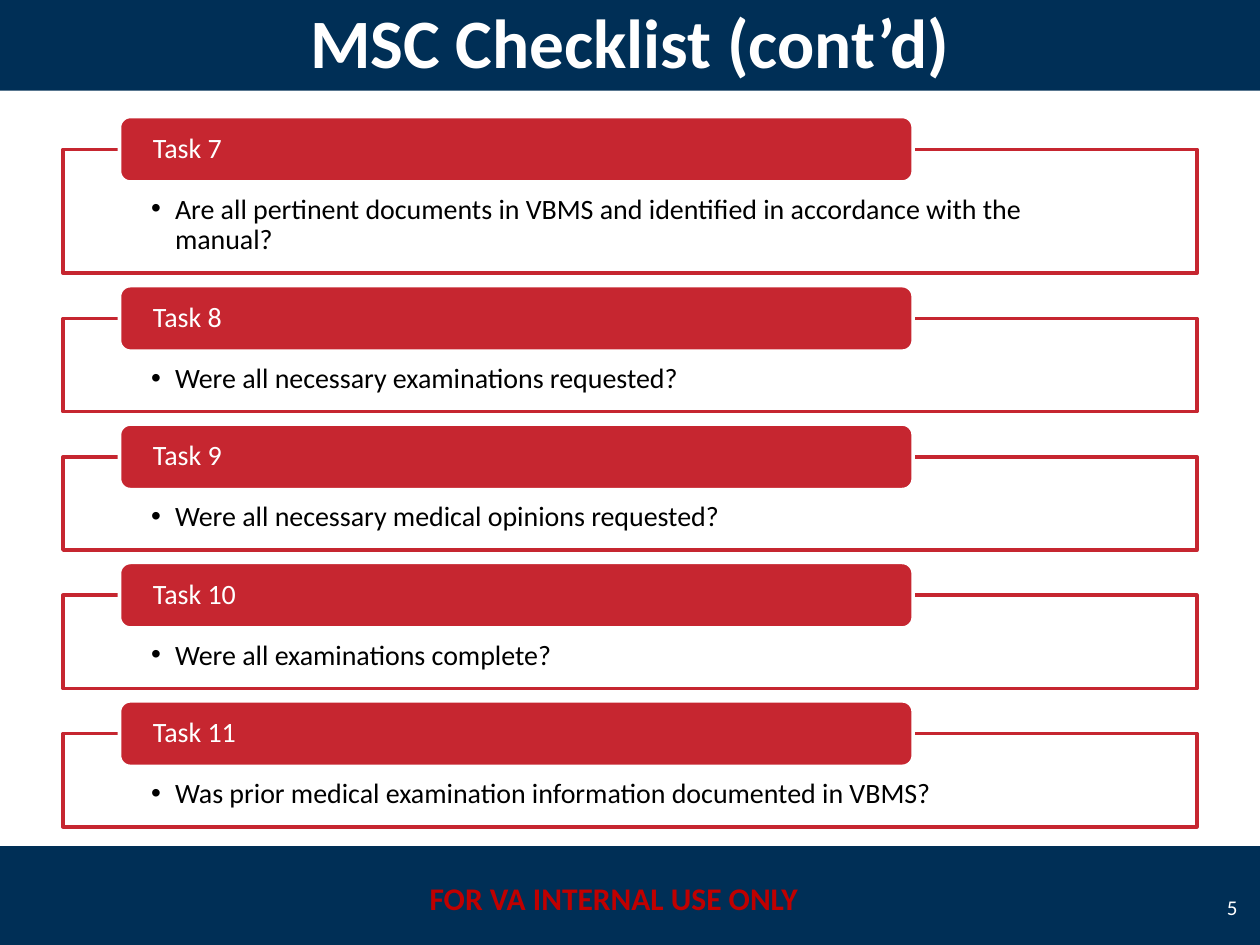
"""Build the MSC checklist slide with its five task panels."""
from dataclasses import dataclass

from lxml import etree
from pptx import Presentation
from pptx.dml.color import RGBColor
from pptx.enum.shapes import MSO_SHAPE
from pptx.enum.text import MSO_ANCHOR, MSO_AUTO_SIZE, PP_ALIGN
from pptx.oxml.ns import qn
from pptx.shapes.autoshape import Shape
from pptx.slide import Slide
from pptx.text.text import _Paragraph
from pptx.util import Cm, Pt

RECT, ROUND = MSO_SHAPE.RECTANGLE, MSO_SHAPE.ROUNDED_RECTANGLE
TOP, MIDDLE = MSO_ANCHOR.TOP, MSO_ANCHOR.MIDDLE
LEFT, CENTER, RIGHT = PP_ALIGN.LEFT, PP_ALIGN.CENTER, PP_ALIGN.RIGHT
FIXED = MSO_AUTO_SIZE.NONE
FONT = "Calibri"
HUES = {"navy": "002F56", "red": "C62630", "alert": "C00000",
        "white": "FFFFFF", "black": "000000"}
START, GAP, RISE = 3.01, 0.91, 0.66


@dataclass
class Box:
    left: float
    top: float
    width: float
    height: float


@dataclass
class Task:
    name: str
    ask: str
    height: float = 1.88


TASKS = [
    Task("Task 7", "Are all pertinent documents in VBMS and identified "
         "in accordance with the manual?", 2.5),
    Task("Task 8", "Were all necessary examinations requested?"),
    Task("Task 9", "Were all necessary medical opinions requested?"),
    Task("Task 10", "Were all examinations complete?"),
    Task("Task 11", "Was prior medical examination information "
         "documented in VBMS?"),
]


def tint(name: str) -> RGBColor:
    """Return a named colour."""
    return RGBColor.from_string(HUES[name])


def place(shape: Shape, box: Box) -> None:
    """Move and size a shape."""
    shape.left, shape.top = Cm(box.left), Cm(box.top)
    shape.width, shape.height = Cm(box.width), Cm(box.height)


def paint(shape: Shape, fill: str) -> None:
    """Give a shape a solid fill."""
    shape.fill.solid()
    shape.fill.fore_color.rgb = tint(fill)


def draw(slide: Slide, kind: MSO_SHAPE, box: Box, fill: str,
         line: str = "") -> Shape:
    """Add a filled shape, outlined if a line colour is given."""
    shape = slide.shapes.add_shape(
        kind, Cm(box.left), Cm(box.top), Cm(box.width), Cm(box.height))
    shape.shadow.inherit = False
    paint(shape, fill)
    if line:
        shape.line.color.rgb = tint(line)
        shape.line.width = Pt(2)
    else:
        shape.line.fill.background()
    return shape


def write(shape: Shape, text: str, size: float, hue: str, align: PP_ALIGN,
          anchor: MSO_ANCHOR, bold: bool = False) -> _Paragraph:
    """Set one run of text in a shape and return its paragraph."""
    frame = shape.text_frame
    frame.word_wrap = True
    frame.auto_size = FIXED
    frame.vertical_anchor = anchor
    para = frame.paragraphs[0]
    para.alignment = align
    run = para.add_run()
    run.text = text
    run.font.name, run.font.size, run.font.bold = FONT, Pt(size), bold
    run.font.color.rgb = tint(hue)
    return para


def inset(shape: Shape, side: float, top: float, base: float) -> None:
    """Set the text margins of a shape."""
    frame = shape.text_frame
    frame.margin_left = frame.margin_right = Cm(side)
    frame.margin_top, frame.margin_bottom = Cm(top), Cm(base)


def label(slide: Slide, box: Box, text: str, size: float, hue: str,
          align: PP_ALIGN, anchor: MSO_ANCHOR, bold: bool = False) -> None:
    """Add a free text box."""
    shape = slide.shapes.add_textbox(0, 0, 0, 0)
    place(shape, box)
    write(shape, text, size, hue, align, anchor, bold)


def panel(slide: Slide, task: Task, top: float) -> None:
    """Draw a framed question with its task tag."""
    frame = draw(slide, RECT, Box(1.27, top, 22.86, task.height),
                 "white", "red")
    color = frame.fill._xPr.find(qn("a:solidFill"))[0]
    etree.SubElement(color, qn("a:alpha"), val="90000")
    inset(frame, 1.78, 0.92, 0.3)
    para = write(frame, task.ask, 16, "black", LEFT, TOP)
    para.level = 1
    para.line_spacing = 0.9
    props = para._p.get_or_add_pPr()
    props.set("marL", str(Cm(0.48)))
    props.set("indent", str(Cm(-0.48)))
    etree.SubElement(props, qn("a:buFont"), typeface="Arial")
    etree.SubElement(props, qn("a:buChar"), char="•")

    tag = draw(slide, ROUND, Box(2.41, top - RISE, 16, 1.32), "red", "white")
    inset(tag, 0.61, 0, 0)
    para = write(tag, task.name, 16, "white", LEFT, MIDDLE)
    para.line_spacing = 0.9


def main() -> None:
    """Build and save the deck."""
    deck = Presentation()
    deck.slide_width, deck.slide_height = Cm(25.4), Cm(19.05)
    slide = deck.slides.add_slide(deck.slide_layouts[5])

    title = slide.shapes.title
    place(title, Box(0, -0.2, 25.4, 2.03))
    paint(title, "navy")
    write(title, "MSC Checklist (cont’d)", 39.6, "white", CENTER, MIDDLE, True)

    draw(slide, RECT, Box(0, 17.06, 25.4, 2.03), "navy")
    label(slide, Box(8.25, 17.6, 8.25, 1.03), "FOR VA INTERNAL USE ONLY",
          18, "alert", CENTER, TOP, True)
    label(slide, Box(24.13, 17.78, 1.07, 1.02), "5", 12, "white",
          RIGHT, MIDDLE)

    top = START
    for task in TASKS:
        panel(slide, task, top)
        top += task.height + GAP
    deck.save("out.pptx")


if __name__ == "__main__":
    main()
